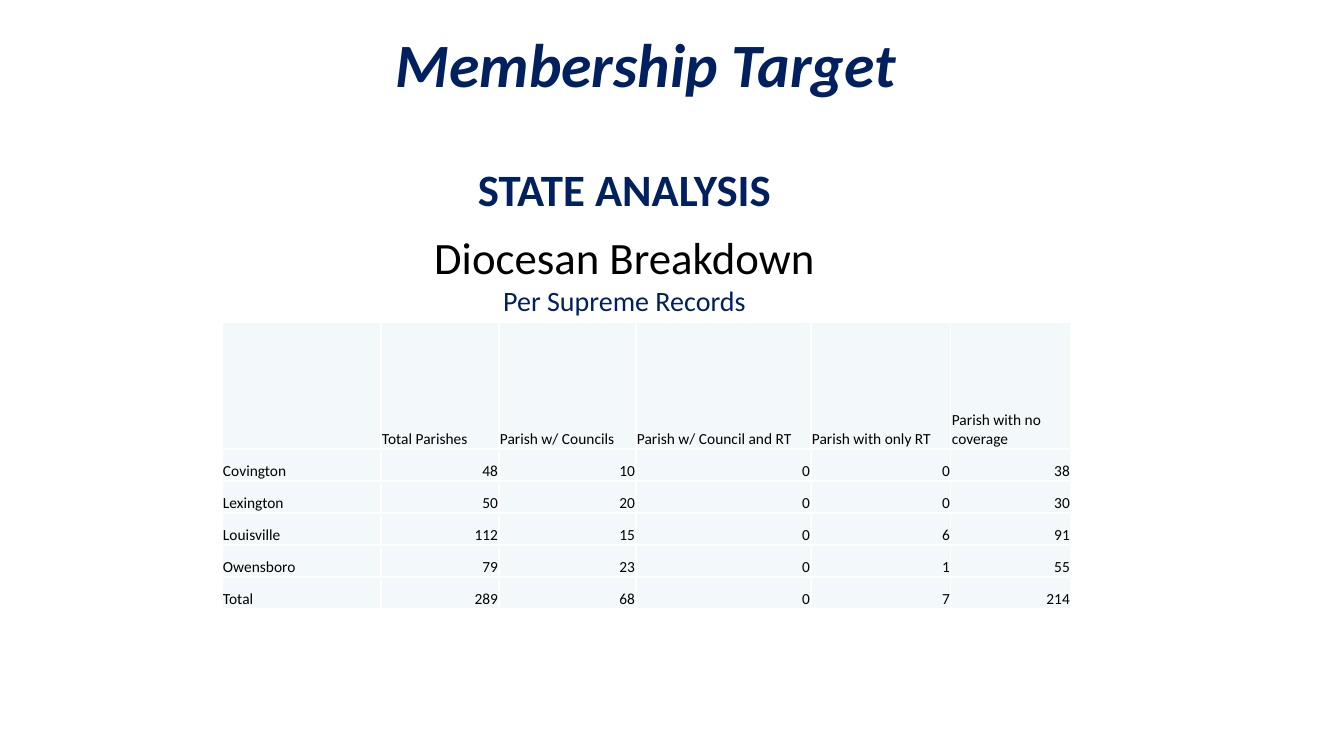
from lxml import etree
from pptx import Presentation
from pptx.dml.color import RGBColor
from pptx.enum.text import MSO_ANCHOR, MSO_AUTO_SIZE, PP_ALIGN
from pptx.oxml.ns import qn
from pptx.util import Emu, Pt

NAVY = RGBColor(0x00, 0x20, 0x60)
BLACK = RGBColor(0x00, 0x00, 0x00)
WHITE = RGBColor(0xFF, 0xFF, 0xFF)
PALE = RGBColor(0xF3, 0xF9, 0xFA)
CENTER, LEFT, RIGHT = PP_ALIGN.CENTER, PP_ALIGN.LEFT, PP_ALIGN.RIGHT
MIDDLE, BOTTOM = MSO_ANCHOR.MIDDLE, MSO_ANCHOR.BOTTOM
NO_AUTOFIT = MSO_AUTO_SIZE.NONE
FONT = "Calibri"

TITLE = "Membership Target "
HEADINGS = [
    ("STATE ANALYSIS", 32, NAVY, True, 0),
    ("Diocesan Breakdown", 32, BLACK, False, 10),
    ("Per Supreme Records", 20, NAVY, False, 0),
]
PARISHES = [
    ("", "Total Parishes", "Parish w/ Councils", "Parish w/ Council and RT",
     "Parish with only RT", "Parish with no coverage"),
    ("Covington", 48, 10, 0, 0, 38),
    ("Lexington", 50, 20, 0, 0, 30),
    ("Louisville", 112, 15, 0, 6, 91),
    ("Owensboro", 79, 23, 0, 1, 55),
    ("Total", 289, 68, 0, 7, 214),
]
TITLE_BOX = (187, 0, 932, 126)
HEADING_BOX = (150, 157, 949, 329)
TABLE_LEFT, TABLE_TOP = 222, 322
COLUMN_WIDTHS = [159, 118, 137, 175, 140, 120]
HEADER_HEIGHT, ROW_HEIGHT = 127, 32


def px(length):
    return Emu(round(length * 914400 / 100.8))


def style(para, size, color, align, bold=False, italic=False):
    para.alignment = align
    font = para.font
    font.name, font.size = FONT, Pt(size)
    font.bold, font.italic = bold, italic
    font.color.rgb = color


def add_borders(cell):
    properties = cell._tc.get_or_add_tcPr()
    for side in ("a:lnL", "a:lnR", "a:lnT", "a:lnB"):
        line = etree.SubElement(properties, qn(side), w=str(Pt(1)))
        fill = etree.SubElement(line, qn("a:solidFill"))
        etree.SubElement(fill, qn("a:srgbClr"), val=str(WHITE))


def add_title(page):
    title = page.shapes.title
    title.left, title.top, title.width, title.height = map(px, TITLE_BOX)
    frame = title.text_frame
    frame.text = TITLE
    frame.auto_size = NO_AUTOFIT
    frame.vertical_anchor = MIDDLE
    style(frame.paragraphs[0], 44, NAVY, CENTER, bold=True, italic=True)


def add_headings(page):
    frame = page.shapes.add_textbox(*map(px, HEADING_BOX)).text_frame
    frame.word_wrap = True
    frame.text = "\n".join(heading[0] for heading in HEADINGS)
    for para, (_, size, color, bold, gap) in zip(frame.paragraphs, HEADINGS):
        style(para, size, color, CENTER, bold)
        if gap:
            para.space_before = Pt(gap)


def add_parish_table(page):
    row_heights = [HEADER_HEIGHT] + [ROW_HEIGHT] * (len(PARISHES) - 1)
    table = page.shapes.add_table(
        len(PARISHES), len(COLUMN_WIDTHS), px(TABLE_LEFT), px(TABLE_TOP),
        px(sum(COLUMN_WIDTHS)), px(sum(row_heights))).table
    for column, width in zip(table.columns, COLUMN_WIDTHS):
        column.width = px(width)
    for row, height, values in zip(table.rows, row_heights, PARISHES):
        row.height = px(height)
        for cell, value in zip(row.cells, values):
            cell.text = str(value)
            cell.vertical_anchor = BOTTOM
            cell.margin_left = cell.margin_right = cell.margin_top = px(1)
            cell.margin_bottom = 0
            add_borders(cell)
            cell.fill.solid()
            cell.fill.fore_color.rgb = PALE
            align = RIGHT if isinstance(value, int) else LEFT
            style(cell.text_frame.paragraphs[0], 11, BLACK, align)


def main():
    deck = Presentation()
    deck.slide_width, deck.slide_height = px(1344), px(756)
    page = deck.slides.add_slide(deck.slide_layouts[5])
    add_title(page)
    add_headings(page)
    add_parish_table(page)
    deck.save("out.pptx")


if __name__ == "__main__":
    main()
